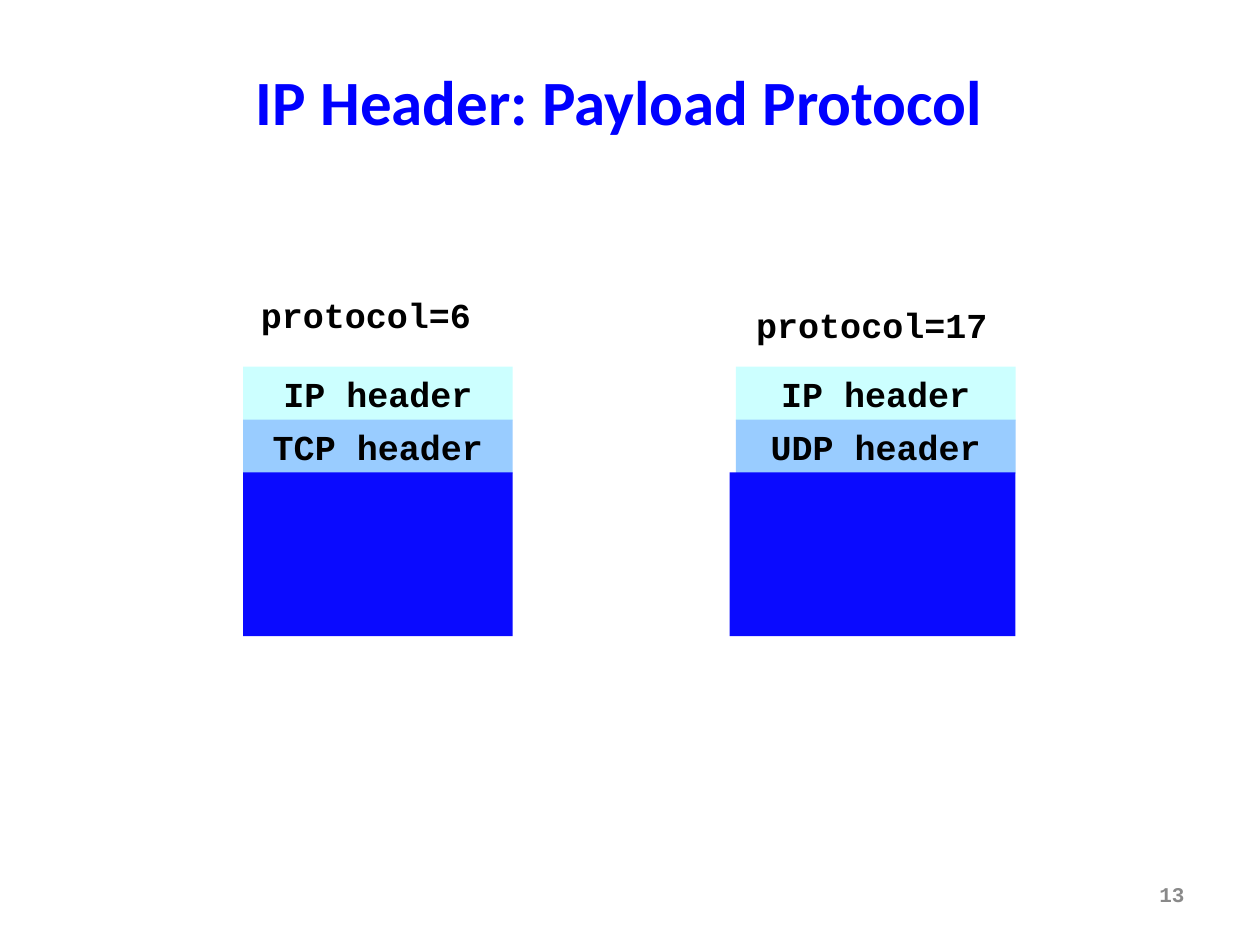
from pptx import Presentation
from pptx.dml.color import RGBColor
from pptx.enum.shapes import MSO_SHAPE
from pptx.enum.text import MSO_ANCHOR, MSO_AUTO_SIZE, PP_ALIGN
from pptx.util import Inches, Pt

RECTANGLE = MSO_SHAPE.RECTANGLE
TOP, MIDDLE = MSO_ANCHOR.TOP, MSO_ANCHOR.MIDDLE
CENTER, RIGHT = PP_ALIGN.CENTER, PP_ALIGN.RIGHT
FIXED, GROW = MSO_AUTO_SIZE.NONE, MSO_AUTO_SIZE.SHAPE_TO_FIT_TEXT

BLACK = RGBColor(0x00, 0x00, 0x00)
GRAY = RGBColor(0x89, 0x89, 0x89)
TITLE_BLUE = RGBColor(0x00, 0x00, 0xFF)
IP_CYAN = RGBColor(0xCC, 0xFF, 0xFF)
TRANSPORT_BLUE = RGBColor(0x99, 0xCC, 0xFF)
PAYLOAD_BLUE = RGBColor(0x0A, 0x0A, 0xFF)

MONO = "Courier New"
HEADER_TOP = 2.91
HEADER_STEP = 0.42
HEADER_HEIGHT = 0.43
PAYLOAD_HEIGHT = 1.3


def write(shape, text, size=20, color=BLACK, font=MONO, align=CENTER,
          anchor=TOP, space_before=0.2, wrap=True):
    frame = shape.text_frame
    frame.text = text
    frame.word_wrap = wrap
    frame.auto_size = FIXED if wrap else GROW
    frame.vertical_anchor = anchor
    para = frame.paragraphs[0]
    para.alignment = align
    para.space_before = Pt(size * space_before)
    span = para.runs[0]
    span.font.name = font
    span.font.size = Pt(size)
    span.font.bold = True
    span.font.color.rgb = color


def add_label(page, position, text, **style):
    box = page.shapes.add_textbox(*map(Inches, position))
    write(box, text, **style)


def add_block(page, position, fill, text=""):
    block = page.shapes.add_shape(RECTANGLE, *map(Inches, position))
    block.shadow.inherit = False
    block.fill.solid()
    block.fill.fore_color.rgb = fill
    block.line.fill.background()
    if text:
        write(block, text)


def add_packet(page, transport, header_span, payload_span):
    left, width = header_span
    transport_top = HEADER_TOP + HEADER_STEP
    payload_top = transport_top + HEADER_STEP
    add_block(page, (left, HEADER_TOP, width, HEADER_HEIGHT), IP_CYAN, "IP header")
    add_block(page, (left, transport_top, width, HEADER_HEIGHT),
              TRANSPORT_BLUE, f"{transport} header")
    left, width = payload_span
    add_block(page, (left, payload_top, width, PAYLOAD_HEIGHT), PAYLOAD_BLUE)


def main():
    deck = Presentation()
    deck.slide_width, deck.slide_height = Inches(10), Inches(7.5)
    page = deck.slides.add_slide(deck.slide_layouts[6])

    add_label(page, (0.33, 0.42, 9.17, 0.75), "IP Header: Payload Protocol",
              size=36, color=TITLE_BLUE, font="Calibri", anchor=MIDDLE,
              space_before=0)
    add_label(page, (7.17, 6.95, 2.33, 0.4), "13",
              size=12, color=GRAY, align=RIGHT)

    add_packet(page, "TCP", (1.93, 2.14), (1.93, 2.14))
    add_packet(page, "UDP", (5.84, 2.22), (5.79, 2.27))

    add_label(page, (1.97, 2.28, 1.87, 0.43), "protocol=6", wrap=False)
    add_label(page, (5.89, 2.36, 2.06, 0.43), "protocol=17", wrap=False)

    deck.save("out.pptx")


if __name__ == "__main__":
    main()
